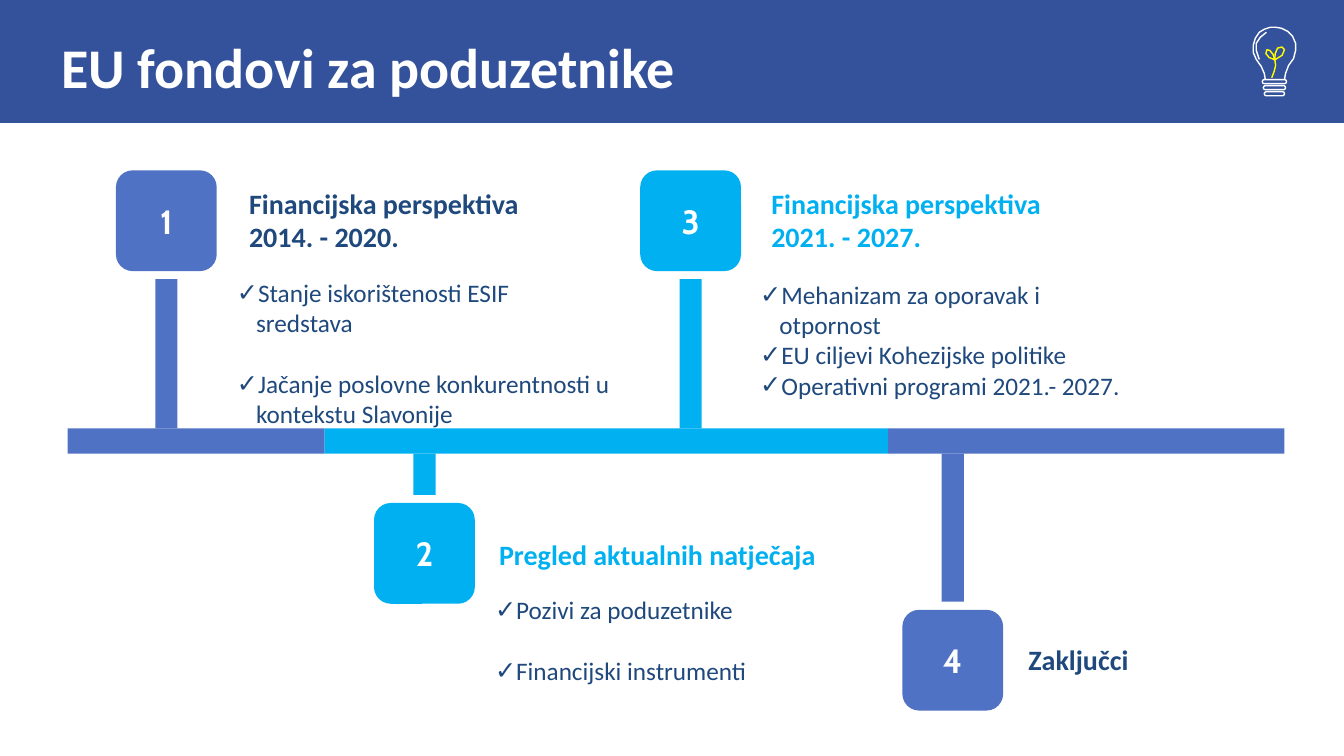
import pptx
import pptx.dml.color
import pptx.enum.shapes
import pptx.enum.text
import pptx.oxml
import pptx.oxml.ns
import pptx.util

Inches, Pt = pptx.util.Inches, pptx.util.Pt
SHAPE = pptx.enum.shapes.MSO_SHAPE
ALIGN = pptx.enum.text.PP_ALIGN
ANCHOR = pptx.enum.text.MSO_ANCHOR
RGB = pptx.dml.color.RGBColor.from_string
COLORS = {"header": "34529B", "blue": "5072C4", "cyan": "00B0F0",
          "navy": "1F497D", "white": "FFFFFF", "yellow": "FFFF00"}


def add_block(kind, x, y, w, h, color):
    """Add a filled shape without outline or shadow."""
    sp = s.shapes.add_shape(kind, Inches(x), Inches(y), Inches(w), Inches(h))
    sp.shadow.inherit = False
    sp.fill.solid()
    sp.fill.fore_color.rgb = RGB(COLORS[color])
    sp.line.fill.background()
    return sp


def add_text(p, text, size, color, bold=False, font="Calibri"):
    r = p.add_run()
    r.text = text
    r.font.size, r.font.bold, r.font.name = Pt(size), bold, font
    r.font.color.rgb = RGB(COLORS[color])


prs = pptx.Presentation()
prs.slide_width, prs.slide_height = Inches(13.33), Inches(7.5)
s = prs.slides.add_slide(prs.slide_layouts.get_by_name("Comparison"))
holders = {ph.placeholder_format.idx: ph for ph in s.placeholders}

# Header
band = add_block(SHAPE.RECTANGLE, 0, 0, 13.33, 1.22, "header")
s.shapes._spTree.insert(2, band._element)  # behind the title
title = s.shapes.title
title.left, title.top = Inches(0.48), Inches(0.27)
title.width, title.height = Inches(11.65), Inches(0.7)
tf = title.text_frame
tf.auto_size = pptx.enum.text.MSO_AUTO_SIZE.NONE
tf.vertical_anchor = ANCHOR.TOP
tf.margin_left = tf.margin_right = tf.margin_top = tf.margin_bottom = Inches(0.13)
p = tf.paragraphs[0]
p.alignment, p.line_spacing = ALIGN.LEFT, 0.9
add_text(p, "EU fondovi za poduzetnike", 40, "white", True)

# Timeline
BAR_TOP, BAR_BOTTOM = 4.25, 4.5
for start, end, color in [(0.67, 3.22, "blue"), (3.22, 8.81, "cyan"), (8.81, 12.74, "blue")]:
    add_block(SHAPE.RECTANGLE, start, BAR_TOP, end - start, BAR_BOTTOM - BAR_TOP, color)

BADGE, GAP, STEM = 1, 0.08, 0.22
stages = [  # badge left and top, badge colour, heading colour, heading and its box
    (1.15, 1.69, "blue", "navy", "Financijska perspektiva 2014. - 2020.", (2.35, 1.8, 3.08, 0.77)),
    (3.71, 4.99, "cyan", "cyan", "Pregled aktualnih natječaja", (4.83, 5.28, 3.4, 0.44)),
    (6.35, 1.69, "cyan", "cyan", "Financijska perspektiva 2021. - 2027.", (7.53, 1.8, 3.08, 0.77)),
    (8.95, 6.05, "blue", "navy", "Zaključci", (10.08, 6.32, 2.05, 0.44)),
]
for number, (x, y, color, heading_color, heading, box) in enumerate(stages, 1):
    if y < BAR_TOP:
        stem_top, stem_bottom = y + BADGE + GAP, BAR_TOP
    else:
        stem_top, stem_bottom = BAR_BOTTOM, y - GAP
    add_block(SHAPE.RECTANGLE, x + (BADGE - STEM) / 2, stem_top, STEM,
              stem_bottom - stem_top, color)
    badge = add_block(SHAPE.ROUNDED_RECTANGLE, x, y, BADGE, BADGE, color)
    tf = badge.text_frame
    tf.vertical_anchor = ANCHOR.MIDDLE
    p = tf.paragraphs[0]
    p.alignment = ALIGN.CENTER
    add_text(p, str(number), 24, "white", True, "Cabin")

    tf = s.shapes.add_textbox(*map(Inches, box)).text_frame
    tf.word_wrap = True
    tf.margin_left = tf.margin_right = Inches(0.12)
    add_text(tf.paragraphs[0], heading, 20, heading_color, True)

# Check lists
lists = [  # placeholder, box, space after an item, items
    (2, (2.35, 2.7, 3.8, 1.31), 22,
     ["Stanje iskorištenosti ESIF sredstava",
      "Jačanje poslovne konkurentnosti u kontekstu Slavonije"]),
    (1, (4.91, 5.85, 2.89, 1.01), 22, ["Pozivi za poduzetnike", "Financijski instrumenti"]),
    (4, (7.54, 2.72, 3.8, 1.31), 0,
     ["Mehanizam za oporavak i otpornost", "EU ciljevi Kohezijske politike",
      "Operativni programi 2021.- 2027."]),
]
for idx, box, space, items in lists:
    sp = holders[idx]
    sp.left, sp.top, sp.width, sp.height = map(Inches, box)
    tf = sp.text_frame
    tf.auto_size = pptx.enum.text.MSO_AUTO_SIZE.NONE
    tf.vertical_anchor = ANCHOR.TOP
    tf.margin_left, tf.margin_right = 0, Inches(0.1)
    for i, item in enumerate(items):
        p = tf.add_paragraph() if i else tf.paragraphs[0]
        p.space_before, p.space_after = Pt(0), Pt(space)
        pPr = p._p.get_or_add_pPr()
        pPr.set("marL", str(Inches(0.19)))
        pPr.set("indent", str(-Inches(0.19)))
        pPr.append(pptx.oxml.parse_xml(
            f'<a:buChar {pptx.oxml.ns.nsdecls("a")} char="✓"/>'))
        add_text(p, item, 18, "navy")
holders[3]._element.getparent().remove(holders[3]._element)

# Light bulb with a sprout, its points in hundredths of an inch
glass = [(1255, 79), (1254, 73), (1251, 66), (1246, 59), (1243, 52), (1243, 45), (1245, 38),
         (1249, 32), (1254, 29), (1260, 27), (1265, 27), (1271, 28), (1277, 31), (1282, 36),
         (1285, 43), (1285, 50), (1283, 58), (1278, 65), (1275, 73), (1274, 79)]
glint = [(1256, 32), (1250, 37), (1246, 43), (1246, 50), (1249, 59)]
stalk = [(1264, 59), (1266, 64), (1266, 70), (1265, 77)]
left_leaf = [(1264, 59), (1258, 58), (1254, 55), (1254, 51), (1257, 51), (1261, 54), (1264, 59)]
right_leaf = [(1264, 59), (1263, 53), (1264, 47), (1268, 45), (1271, 47), (1270, 53), (1264, 59)]
for strokes, color, turn in [([glass, glint], "white", 0),
                             ([stalk, left_leaf, right_leaf], "yellow", 13)]:
    outline = s.shapes.build_freeform(*strokes[0][0], scale=Inches(0.01))
    for points in strokes:
        outline.move_to(*points[0])
        outline.add_line_segments(points[1:], close=False)
    sp = outline.convert_to_shape()
    sp.shadow.inherit = False
    sp.fill.background()
    sp.line.color.rgb = RGB(COLORS[color])
    sp.line.width = Pt(1)
    sp.rotation = turn
for x, y, w in [(12.52, 0.79, 0.24), (12.53, 0.85, 0.22), (12.54, 0.91, 0.2)]:
    ring = add_block(SHAPE.ROUNDED_RECTANGLE, x, y, w, 0.04, "header")
    ring.adjustments[0] = 0.5
    ring.line.color.rgb = RGB(COLORS["white"])
    ring.line.width = Pt(1)

prs.save("out.pptx")
